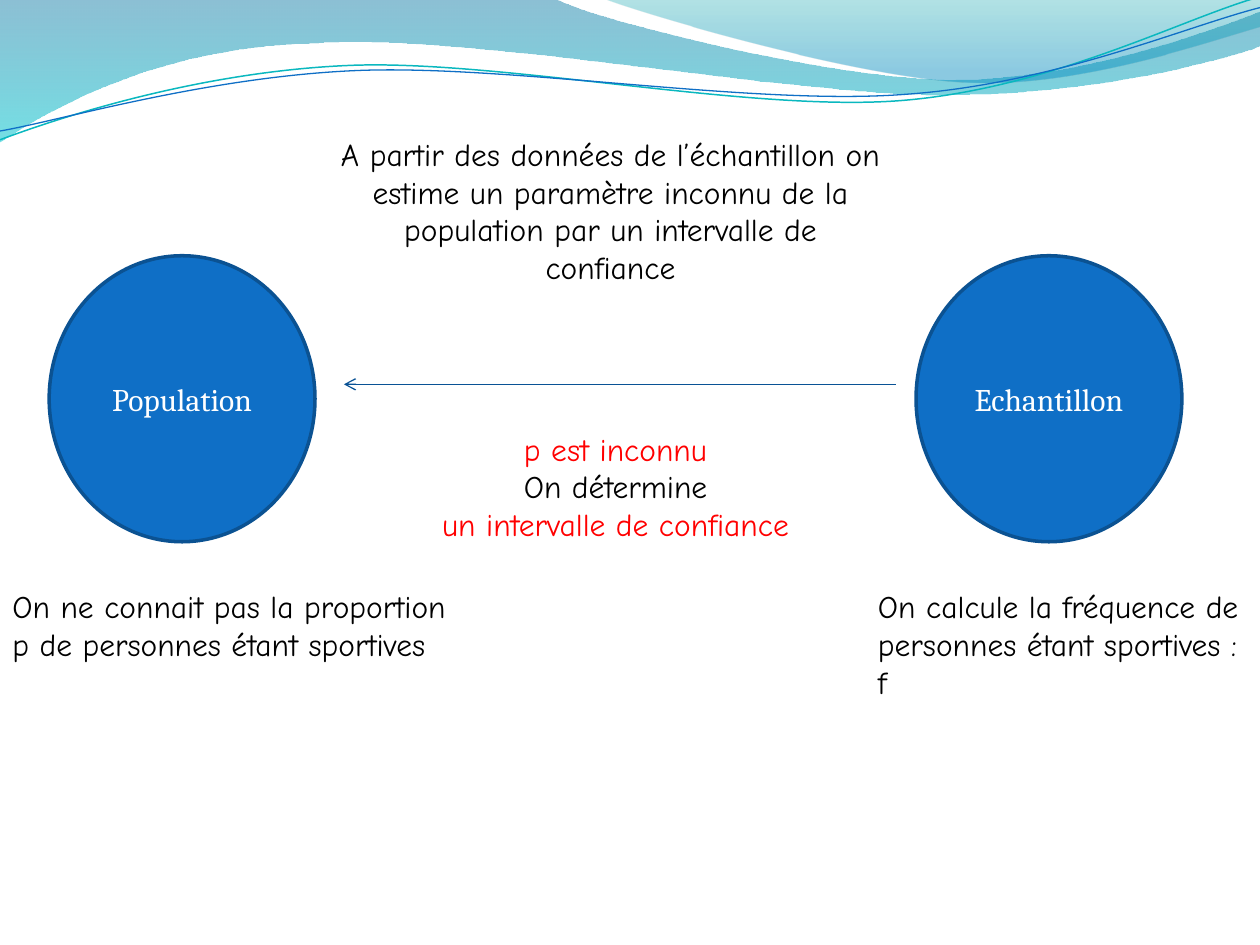
from math import cos, radians, sin

from pptx import Presentation
from pptx.dml.color import RGBColor
from pptx.enum.shapes import MSO_CONNECTOR as Connector, MSO_SHAPE as Preset
from pptx.enum.text import MSO_ANCHOR as Anchor, MSO_AUTO_SIZE as AutoSize, PP_ALIGN as Align
from pptx.oxml.ns import qn
from pptx.util import Inches, Pt
from lxml.etree import SubElement

# All places are columns and rows of a one-inch grid.
COLUMNS, ROWS = 10, 7.5
COLOURS = {
    "blue": "0F6FC6", "outline": "0B5292", "arrow": "095295", "teal": "0AB8BF",
    "white": "FFFFFF", "black": "000000", "red": "FF0000",
    "wave top": "0074A1", "wave bottom": "00C6CF",
    "crest top": "00A1A9", "crest bottom": "008BBF",
}

# Outlines: a pair is a straight step, six numbers are a cubic curve.
WAVE = [(0, 0), (4.4, -0.01), (4.76, 0.17, 6.64, 0.63, 7.58, 0.63),
        (8.53, 0.63, 9.58, 0.26, 10, 0.09), (10.01, 0.36),
        (9.83, 0.44, 8.7, 0.76, 7.46, 0.75), (6.22, 0.75, 3.82, 0.28, 2.57, 0.34),
        (1.29, 0.36, 0.46, 0.83, -0.01, 1.13), (0, 0)]
CREST = [(4.79, -0.01), (5.09, 0.11, 6.82, 0.62, 7.69, 0.65),
         (8.56, 0.69, 9.61, 0.32, 10, 0.21), (10, 0), (4.79, -0.01)]
TEAL_LINE = [(0, 1.11), (0.48, 0.93, 1.58, 0.57, 2.77, 0.52),
             (3.95, 0.47, 5.93, 0.89, 7.13, 0.8), (8.33, 0.71, 9.38, 0.15, 9.98, -0.02)]
BLUE_LINE = [(0, 1.04), (0.47, 0.96, 1.64, 0.61, 2.83, 0.56),
             (4.03, 0.51, 5.97, 0.84, 7.17, 0.75), (8.36, 0.67, 9.41, 0.21, 10, 0.06)]
LINE_TILT = -2.7


def colour(name):
    return RGBColor.from_string(COLOURS[name])


def grid(*cells):
    return [Inches(cell) for cell in cells]


def style_line(line, name, width):
    line.color.rgb = colour(name)
    line.width = Pt(width)


def local_point(point, area, tilt):
    """Turn a place on the page into a place inside a tilted area."""
    left, top, width, height = area
    x, y = point[0] - left - width / 2, point[1] - top - height / 2
    angle = radians(-tilt)
    return (x * cos(angle) - y * sin(angle) + width / 2,
            x * sin(angle) + y * cos(angle) + height / 2)


def add_outline(page, area, steps, close, tilt=0):
    """Add a freeform whose path keeps its curves."""
    builder = page.shapes.build_freeform(*grid(*steps[0]))
    builder.add_line_segments([grid(*step[-2:]) for step in steps[1:]], close=close)
    shape = builder.convert_to_shape()
    shape.shadow.inherit = False
    for key, value in zip(("left", "top", "width", "height"), grid(*area)):
        setattr(shape, key, value)
    shape.rotation = tilt % 360

    outline = next(shape._element.spPr.iter(qn("a:path")))
    for node in list(outline):
        outline.remove(node)
    for key, value in zip(("w", "h"), grid(*area[2:])):
        outline.set(key, str(value))
    for index, step in enumerate(steps):
        kind = "a:cubicBezTo" if len(step) == 6 else "a:lnTo" if index else "a:moveTo"
        node = SubElement(outline, qn(kind))
        for point in zip(step[::2], step[1::2]):
            mark = SubElement(node, qn("a:pt"))
            for key, value in zip("xy", grid(*local_point(point, area, tilt))):
                mark.set(key, str(value))
    if close:
        SubElement(outline, qn("a:close"))
    return shape


def add_wave(page, area, steps, stops):
    """Add a closed area; stops are (colour, position, opacity), top to bottom."""
    shape = add_outline(page, area, steps, True)
    shape.line.fill.background()
    shape.fill.gradient()
    shape.fill.gradient_angle = 270
    for stop, (name, position, _) in zip(shape.fill.gradient_stops, stops):
        stop.color.rgb = colour(name)
        stop.position = position
    nodes = shape._element.spPr.iter(qn("a:srgbClr"))
    for node, (_, _, opacity) in zip(nodes, stops):
        SubElement(node, qn("a:alpha")).set("val", str(opacity * 1000))


def add_curve(page, area, steps, name, width):
    shape = add_outline(page, area, steps, False, LINE_TILT)
    shape.fill.background()
    style_line(shape.line, name, width)


def write(frame, lines, font, align):
    """Fill a frame with (text, colour) lines, one paragraph each."""
    frame.word_wrap = True
    for index, (text, name) in enumerate(lines):
        para = frame.add_paragraph() if index else frame.paragraphs[0]
        para.alignment = align
        span = para.add_run()
        span.text = text
        for key, value in {"name": font, "size": Pt(18)}.items():
            setattr(span.font, key, value)
        span.font.color.rgb = colour(name)


def add_circle(page, left, label):
    circle = page.shapes.add_shape(Preset.OVAL, *grid(left, 2.03, 2.11, 2.27))
    circle.shadow.inherit = False
    circle.fill.solid()
    circle.fill.fore_color.rgb = colour("blue")
    style_line(circle.line, "outline", 2)
    circle.text_frame.vertical_anchor = Anchor.MIDDLE
    write(circle.text_frame, [(label, "white")], "Cambria", Align.CENTER)


def add_arrow(page, start, end, row):
    arrow = page.shapes.add_connector(Connector.STRAIGHT, *grid(start, row, end, row))
    style_line(arrow.line, "arrow", 0.75)
    SubElement(arrow.line._get_or_add_ln(), qn("a:tailEnd")).set("type", "arrow")
    SubElement(arrow._element.spPr, qn("a:effectLst"))


def add_note(page, area, lines, align=Align.LEFT):
    box = page.shapes.add_textbox(*grid(*area))
    write(box.text_frame, lines, "Comic Neue", align)
    box.text_frame.auto_size = AutoSize.SHAPE_TO_FIT_TEXT


def main():
    deck = Presentation()
    deck.slide_width, deck.slide_height = grid(COLUMNS, ROWS)
    page = deck.slides.add_slide(deck.slide_layouts[6])

    add_wave(page, (-0.01, -0.01, 10.02, 1.14), WAVE,
             [("wave top", 0, 45), ("wave bottom", 1, 55)])
    add_wave(page, (4.79, -0.01, 5.21, 0.7), CREST,
             [("crest top", 0, 30), ("crest bottom", 0.8, 45)])
    add_curve(page, (-0.02, 0.22, 10.02, 0.71), TEAL_LINE, "teal", 0.85)
    add_curve(page, (-0.02, 0.3, 10.03, 0.58), BLUE_LINE, "blue", 0.75)

    for left, label in ((0.39, "Population"), (7.27, "Echantillon")):
        add_circle(page, left, label)
    add_arrow(page, 7.11, 2.73, 3.05)

    add_note(page, (3.36, 3.36, 3.05, 1.31), [
        ("p est inconnu", "red"),
        ("On détermine", "black"),
        ("un intervalle de confiance", "red")], Align.CENTER)
    add_note(page, (6.87, 4.61, 3.13, 1.01), [
        ("On calcule la fréquence de personnes étant sportives : f", "black")])
    add_note(page, (0, 4.61, 3.67, 1.01), [
        ("On ne connait pas la proportion p de personnes étant sportives", "black")])
    add_note(page, (2.58, 1.02, 4.53, 1.31), [
        ("A partir des données de l’échantillon on estime un paramètre inconnu "
         "de la population par un intervalle de confiance", "black")], Align.CENTER)
    deck.save("out.pptx")


if __name__ == "__main__":
    main()
